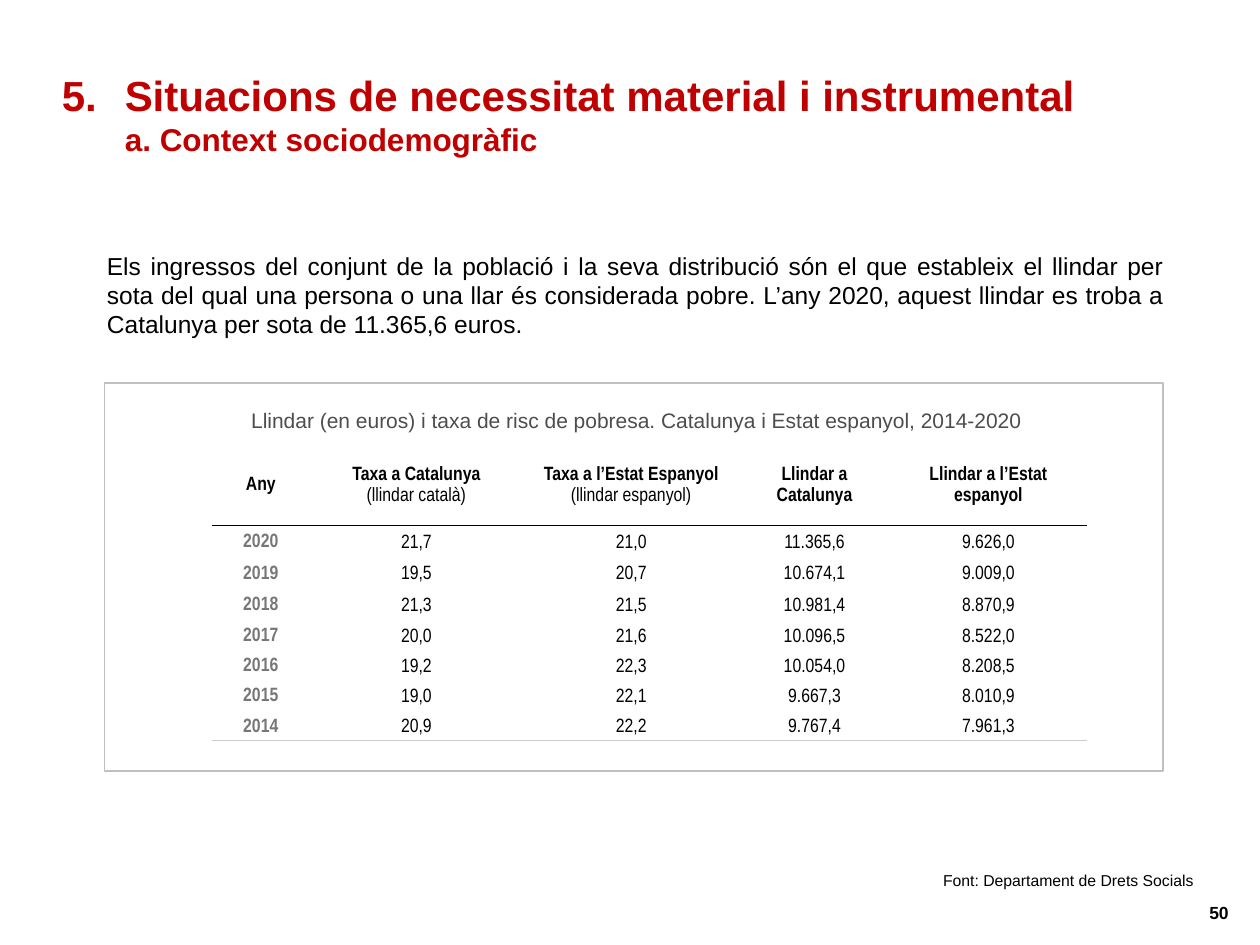
from lxml.etree import SubElement
from pptx import Presentation
from pptx.dml.color import RGBColor
from pptx.enum.shapes import MSO_SHAPE
from pptx.enum.text import MSO_ANCHOR, MSO_AUTO_SIZE, PP_ALIGN
from pptx.oxml.ns import qn
from pptx.util import Inches, Pt

RED = RGBColor(0xC0, 0x00, 0x00)
BLACK = RGBColor(0x00, 0x00, 0x00)
WHITE = RGBColor(0xFF, 0xFF, 0xFF)
GREY = RGBColor(0x77, 0x77, 0x77)
DARK = RGBColor(0x4D, 0x4D, 0x4D)
FRAME = RGBColor(0xC0, 0xC0, 0xC0)
RULE = RGBColor(0xCC, 0xCC, 0xCC)

HEADS = [
    [("Any", True)],
    [("Taxa a Catalunya\v", True), ("(llindar català)", False)],
    [("Taxa a l’Estat Espanyol\v", True), ("(llindar espanyol)", False)],
    [("Llindar a\vCatalunya", True)],
    [("Llindar a l’Estat\vespanyol", True)],
]
DATA = [
    ("2020", "21,7", "21,0", "11.365,6", "9.626,0"),
    ("2019", "19,5", "20,7", "10.674,1", "9.009,0"),
    ("2018", "21,3", "21,5", "10.981,4", "8.870,9"),
    ("2017", "20,0", "21,6", "10.096,5", "8.522,0"),
    ("2016", "19,2", "22,3", "10.054,0", "8.208,5"),
    ("2015", "19,0", "22,1", "9.667,3", "8.010,9"),
    ("2014", "20,9", "22,2", "9.767,4", "7.961,3"),
]
WIDTHS = [0.76, 1.71, 1.7, 1.21, 1.55]
HEIGHTS = [0.66] + [0.25] * 3 + [0.24] * 4


def write(frame, runs, size=11, font="Arial", color=BLACK,
          align=PP_ALIGN.CENTER, spacing=None, after=0):
    """Fill the first paragraph with (text, bold) or (text, bold, size) runs."""
    para = frame.paragraphs[0]
    para.alignment = align
    para.space_before = Pt(0)
    para.space_after = Pt(after)
    if spacing:
        para.line_spacing = spacing
    for text, bold, *own in runs:
        for i, part in enumerate(text.split("\v")):
            if i:
                para.add_line_break()
            if part:
                run = para.add_run()
                run.text = part
                run.font.name = font
                run.font.size = Pt(own[0] if own else size)
                run.font.bold = bold
                run.font.color.rgb = color
    return para


def add_text(slide, box, text, bold=False, anchor=MSO_ANCHOR.TOP, pad=None, **style):
    frame = slide.shapes.add_textbox(*map(Inches, box)).text_frame
    frame.word_wrap = True
    frame.vertical_anchor = anchor
    if pad is not None:
        frame.margin_left = frame.margin_right = Inches(pad)
        frame.margin_top = frame.margin_bottom = Inches(pad)
    write(frame, [(text, bold)], **style)


def add_title(slide):
    title = slide.shapes.title
    title.left, title.top, title.width, title.height = map(
        Inches, (0.39, 0.63, 9.37, 0.55))
    frame = title.text_frame
    frame.auto_size = MSO_AUTO_SIZE.NONE
    frame.vertical_anchor = MSO_ANCHOR.MIDDLE
    props = frame.paragraphs[0]._p.get_or_add_pPr()
    props.set("marL", str(Inches(0.5)))
    props.set("indent", str(-Inches(0.5)))
    SubElement(props, qn("a:buFont"), typeface="+mj-lt")
    SubElement(props, qn("a:buAutoNum"), type="arabicPeriod", startAt="5")
    write(frame, [("Situacions de necessitat material i instrumental\v", True),
                  ("a. Context sociodemogràfic", True, 18)],
          size=24, color=RED, align=PP_ALIGN.LEFT)


def add_frame(slide):
    rect = slide.shapes.add_shape(
        MSO_SHAPE.RECTANGLE, *map(Inches, (0.83, 3.04, 8.4, 3.08)))
    rect.shadow.inherit = False
    rect.fill.solid()
    rect.fill.fore_color.rgb = WHITE
    rect.line.color.rgb = FRAME
    rect.line.width = Pt(0.75)


def set_edge(cell, side, color, width):
    edge = SubElement(cell._tc.get_or_add_tcPr(), qn(f"a:ln{side}"), w=str(Pt(width)))
    fill = SubElement(edge, qn("a:solidFill"))
    SubElement(fill, qn("a:srgbClr"), val=str(color))


def style_cell(cell, row, col):
    """Draw white column gaps, a rule under the heads and one at the foot."""
    if col != 1:
        set_edge(cell, "L", WHITE, 1)
    if 0 < col < len(WIDTHS) - 1:
        set_edge(cell, "R", WHITE, 1)
    if row == 1:
        set_edge(cell, "T", BLACK, 1)
    if row == 0:
        set_edge(cell, "B", BLACK, 1)
    elif row == len(DATA):
        set_edge(cell, "B", RULE, 0.75)
    cell.fill.background()
    cell.vertical_anchor = MSO_ANCHOR.MIDDLE
    cell.margin_left = cell.margin_right = Inches(0.01)
    cell.margin_top = Inches(0.04 if row and col == 0 else 0.01)
    cell.margin_bottom = 0


def add_rates(slide):
    table = slide.shapes.add_table(
        len(HEIGHTS), len(WIDTHS), *map(Inches, (1.69, 3.51, 6.93, 2.37))).table
    table.first_row = table.horz_banding = False
    for column, width in zip(table.columns, WIDTHS):
        column.width = Inches(width)
    for line, height in zip(table.rows, HEIGHTS):
        line.height = Inches(height)
    body = [[[(text, col == 0)] for col, text in enumerate(line)] for line in DATA]
    for row, line in enumerate([HEADS] + body):
        for col, runs in enumerate(line):
            cell = table.cell(row, col)
            style_cell(cell, row, col)
            year = row > 0 and col == 0
            write(cell.text_frame, runs, font="Arial Narrow",
                  color=GREY if year else BLACK,
                  spacing=0.75 if year else Pt(12),
                  after=0 if row else 3)


def main():
    deck = Presentation()
    deck.slide_width, deck.slide_height = Inches(10), Inches(7.5)
    slide = deck.slides.add_slide(deck.slide_layouts[5])
    add_frame(slide)
    add_text(slide, (7.52, 6.98, 2.33, 0.52), "50", bold=True, size=10,
             anchor=MSO_ANCHOR.MIDDLE, align=PP_ALIGN.RIGHT)
    add_text(slide, (0.75, 1.94, 8.59, 1.02),
             "Els ingressos del conjunt de la població i la seva distribució són "
             "el que estableix el llindar per sota del qual una persona o una llar "
             "és considerada pobre. L’any 2020, aquest llindar es troba a Catalunya "
             "per sota de 11.365,6 euros.", size=14, align=PP_ALIGN.JUSTIFY)
    add_title(slide)
    add_text(slide, (1.02, 3.19, 8.07, 0.31),
             "Llindar (en euros) i taxa de risc de pobresa. "
             "Catalunya i Estat espanyol, 2014-2020", size=12, color=DARK, pad=0.04)
    add_text(slide, (3.74, 6.74, 5.83, 0.47), "Font: Departament de Drets Socials",
             size=9, anchor=MSO_ANCHOR.MIDDLE, align=PP_ALIGN.RIGHT, spacing=1.1)
    add_rates(slide)
    deck.save("out.pptx")


if __name__ == "__main__":
    main()
